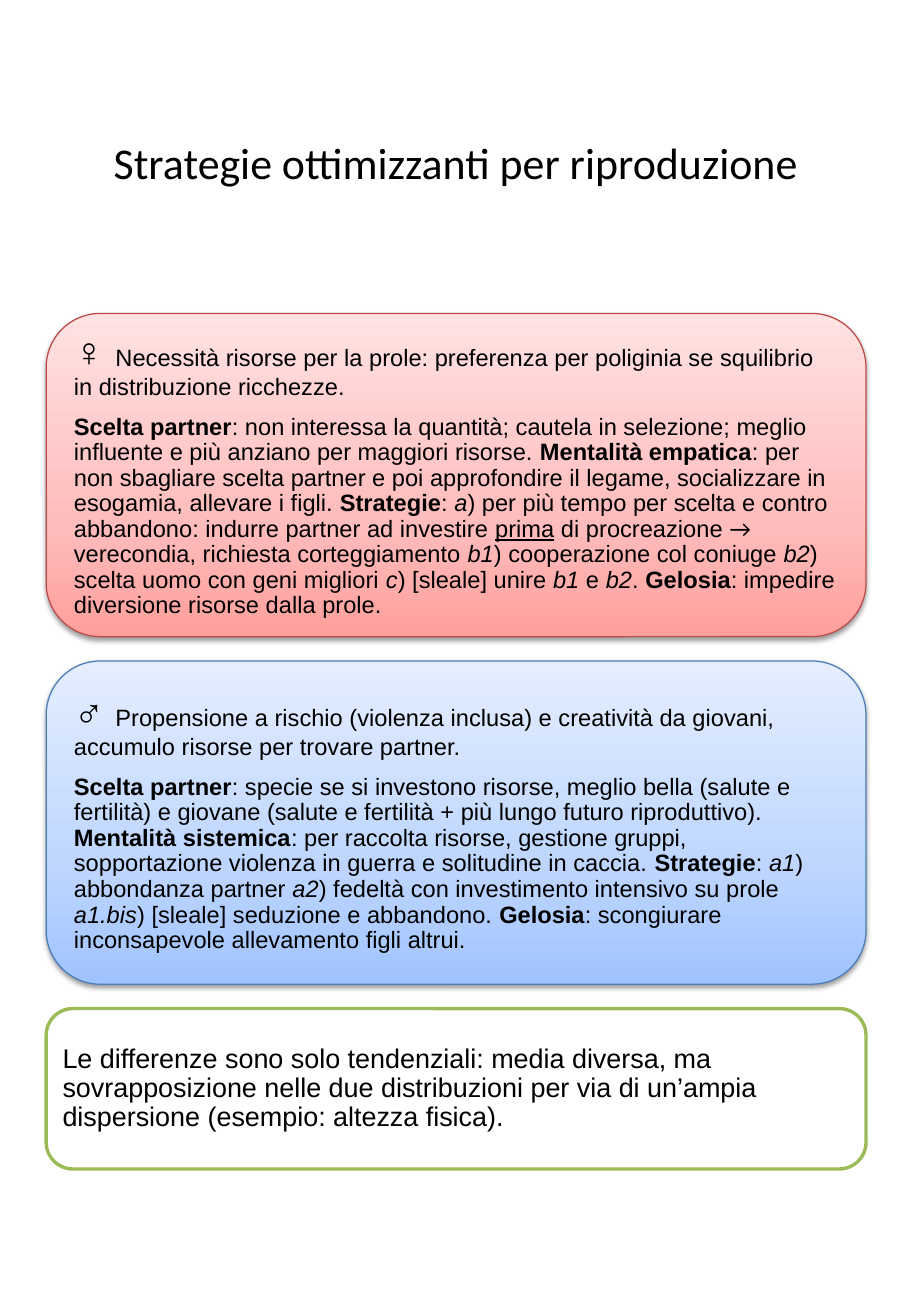
import copy
import dataclasses
import lxml.etree
import pptx
import pptx.dml.color
import pptx.enum.shapes
import pptx.enum.text
import pptx.oxml.ns
import pptx.util

Inches, Pt = pptx.util.Inches, pptx.util.Pt
qn = pptx.oxml.ns.qn
rgb = pptx.dml.color.RGBColor.from_string


@dataclasses.dataclass(frozen=True)
class Theme:
    head: str = "Calibri"
    body: str = "Arial"
    ink: str = "000000"
    paper: str = "FFFFFF"
    title: float = 26
    sign: float = 24
    text: float = 14
    note: float = 16
    rose: tuple = ("FFA09D", "FFBCBC", "FFE2E2")
    blue: tuple = ("9FC3FF", "BDD5FF", "E4EEFF")
    stops: tuple = (0, 0.35, 1)
    red_edge: str = "BD4B48"
    blue_edge: str = "4A7DBA"
    green: str = "9BBB59"


THEME = Theme()

# Marks in the text: *bold*, _italic_, ~underlined~, ^heading font^, #large bold sign#
FEMALE = (
    "#♀ #Necessità risorse per la prole: preferenza per poliginia se squilibrio "
    "in distribuzione ricchezze.",
    "*Scelta partner*: non interessa la quantità; cautela in selezione; meglio "
    "influente e più anziano per maggiori risorse. *Mentalità empatica*: per non "
    "sbagliare scelta partner e poi approfondire il legame, socializzare in esogamia, "
    "allevare i figli. *Strategie*: _a_) per più tempo per scelta e contro abbandono: "
    "indurre partner ad investire ~prima~ di procreazione ^→ ^verecondia, richiesta "
    "corteggiamento _b1_) cooperazione col coniuge _b2_) scelta uomo con geni migliori "
    "_c_) [sleale] unire _b1_ e _b2_. *Gelosia*: impedire diversione risorse dalla prole.",
)
MALE = (
    "#♂ #Propensione a rischio (violenza inclusa) e creatività da giovani, "
    "accumulo risorse per trovare partner.",
    "*Scelta partner*: specie se si investono risorse, meglio bella (salute e fertilità) "
    "e giovane (salute e fertilità + più lungo futuro riproduttivo). "
    "*Mentalità sistemica*: per raccolta risorse, gestione gruppi, sopportazione violenza "
    "in guerra e solitudine in caccia. *Strategie*: _a1_) abbondanza partner _a2_) fedeltà "
    "con investimento intensivo su prole _a1.bis_) [sleale] seduzione e abbandono. "
    "*Gelosia*: scongiurare inconsapevole allevamento figli altrui.",
)
NOTE = (
    "Le differenze sono solo tendenziali: media diversa, ma sovrapposizione nelle due "
    "distribuzioni per via di un’ampia dispersione (esempio: altezza fisica).",
)


def split(text):
    """Yield (mark, piece) pairs; the mark is empty for plain text."""
    mark, piece = "", ""
    for sign in text:
        if sign in "*_~^#":
            if piece:
                yield mark, piece
            mark, piece = ("" if mark else sign), ""
        else:
            piece += sign
    if piece:
        yield mark, piece


def frame(shape, side, top):
    body = shape.text_frame
    body.word_wrap = True
    body.vertical_anchor = pptx.enum.text.MSO_ANCHOR.MIDDLE
    body.margin_left = body.margin_right = Inches(side)
    body.margin_top = body.margin_bottom = Inches(top)
    return body


def style(para, name, size, align):
    para.font.name, para.font.size = name, Pt(size)
    para.font.color.rgb = rgb(THEME.ink)
    para.alignment = align


def write(body, texts, size):
    for index, text in enumerate(texts):
        para = body.add_paragraph() if index else body.paragraphs[0]
        style(para, THEME.body, size, pptx.enum.text.PP_ALIGN.LEFT)
        para.line_spacing = 0.9
        para.space_before = Pt(8.4 if index else 0)
        for mark, piece in split(text):
            run = para.add_run()
            run.text = piece
            font = run.font
            if mark == "#":
                font.size = Pt(THEME.sign)
            if mark in ("*", "#"):
                font.bold = True
            elif mark == "_":
                font.italic = True
            elif mark == "~":
                font.underline = True
            elif mark == "^":
                font.name = THEME.head


def title(slide, box, text):
    shape = slide.shapes.add_textbox(*map(Inches, box))
    para = frame(shape, 0.07, 0.04).paragraphs[0]
    para.text = text
    style(para, THEME.head, THEME.title, pptx.enum.text.PP_ALIGN.CENTER)


def panel(slide, box, edge, width, texts, size, inset):
    """Add a white rounded panel with its text and return it."""
    kind = pptx.enum.shapes.MSO_SHAPE.ROUNDED_RECTANGLE
    shape = slide.shapes.add_shape(kind, *map(Inches, box))
    shape.adjustments[0] = 0.167
    shape.shadow.inherit = False
    shape.fill.solid()
    shape.fill.fore_color.rgb = rgb(THEME.paper)
    shape.line.color.rgb = rgb(edge)
    shape.line.width = Pt(width)
    write(frame(shape, inset, inset), texts, size)
    return shape


def shade(shape, colours):
    """Give a panel an upward gradient and a soft shadow."""
    fill = shape.fill
    fill.gradient()
    fill.gradient_angle = 90
    props = shape.element.spPr
    stops = props.find(".//" + qn("a:gsLst"))
    stops.insert(1, copy.deepcopy(stops[0]))
    for stop, place, colour in zip(fill.gradient_stops, THEME.stops, colours):
        stop.position = place
        stop.color.rgb = rgb(colour)
    add = lxml.etree.SubElement
    cast = add(props.find(qn("a:effectLst")), qn("a:outerShdw"), blurRad=str(Pt(3.1)),
               dist=str(Pt(1.6)), dir="5400000", rotWithShape="0")
    tint = add(cast, qn("a:srgbClr"), val=THEME.ink)
    add(tint, qn("a:alpha"), val="38000")


def main():
    deck = pptx.Presentation()
    deck.slide_width, deck.slide_height = Inches(7.5), Inches(10.83)
    slide = deck.slides.add_slide(deck.slide_layouts[6])
    left, width, top, tall, gap = 0.38, 6.75, 2.58, 2.66, 0.2
    title(slide, (left, 0.43, width, 1.81), "Strategie ottimizzanti per riproduzione")
    sexes = ((FEMALE, THEME.rose, THEME.red_edge), (MALE, THEME.blue, THEME.blue_edge))
    for texts, colours, edge in sexes:
        box = (left, top, width, tall)
        shade(panel(slide, box, edge, 0.75, texts, THEME.text, 0.1), colours)
        top += tall + gap
    panel(slide, (left, top, width, 1.32), THEME.green, 2, NOTE, THEME.note, 0.07)
    deck.save("out.pptx")


if __name__ == "__main__":
    main()
